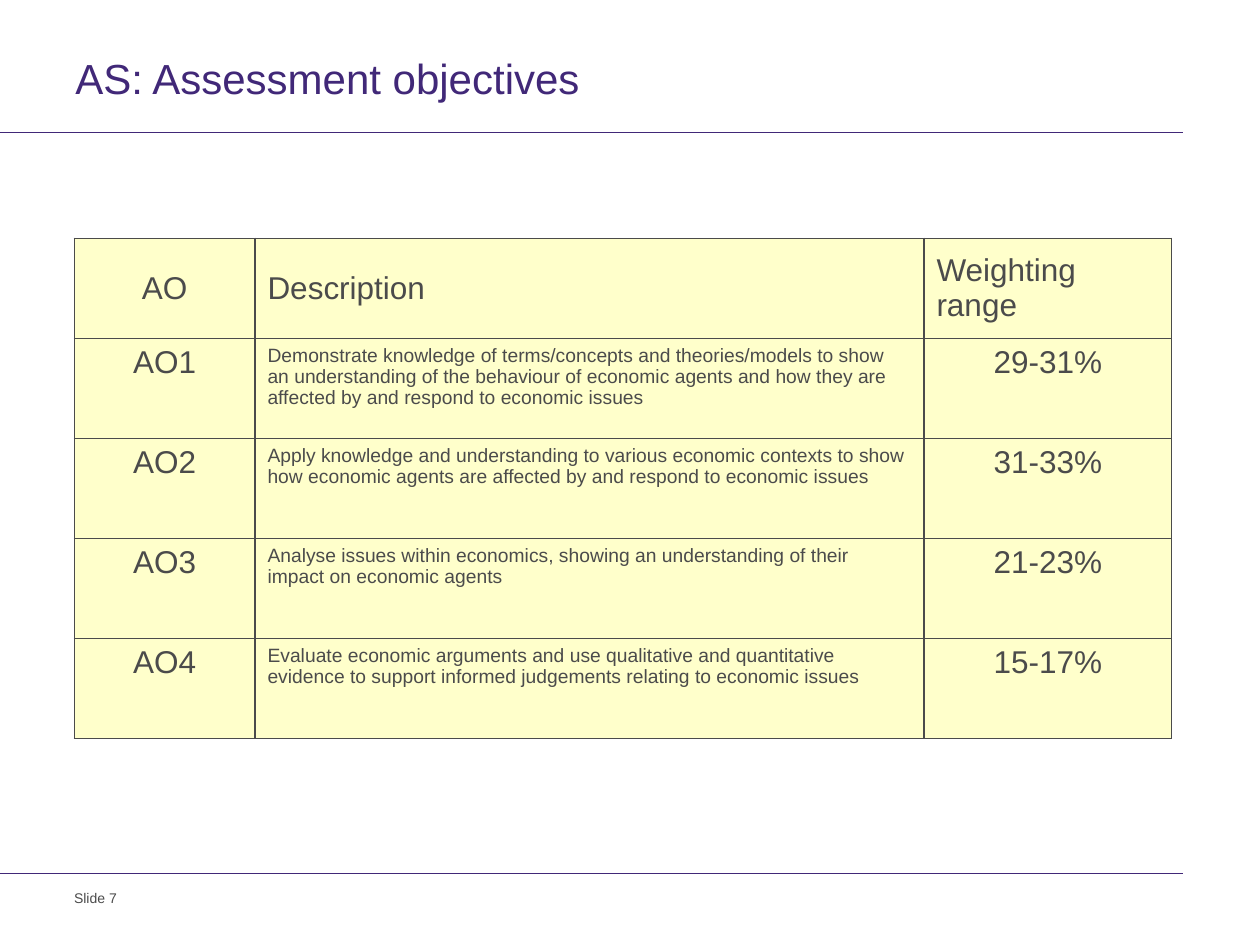
import pptx
import pptx.dml.color
import pptx.enum.shapes
import pptx.enum.text
import pptx.oxml
import pptx.oxml.ns
import pptx.util

Pt = pptx.util.Pt
RGBColor = pptx.dml.color.RGBColor
PP_ALIGN = pptx.enum.text.PP_ALIGN
MSO_ANCHOR = pptx.enum.text.MSO_ANCHOR

PURPLE = RGBColor(0x41, 0x28, 0x78)
GREY = RGBColor(0x4B, 0x4B, 0x4B)
CREAM = RGBColor(0xFF, 0xFF, 0xCB)

HEADER = ("AO", "Description", "Weighting range")
OBJECTIVES = [
    ("AO1", "Demonstrate knowledge of terms/concepts and theories/models to show "
     "an understanding of the behaviour of economic agents and how they are "
     "affected by and respond to economic issues", "29-31%"),
    ("AO2", "Apply knowledge and understanding to various economic contexts to show "
     "how economic agents are affected by and respond to economic issues", "31-33%"),
    ("AO3", "Analyse issues within economics, showing an understanding of their "
     "impact on economic agents", "21-23%"),
    ("AO4", "Evaluate economic arguments and use qualitative and quantitative "
     "evidence to support informed judgements relating to economic issues", "15-17%"),
]


class SlideBuilder:
    font = "Arial"

    def __init__(self, slide):
        self.slide = slide

    def style(self, p, size, color, align=PP_ALIGN.LEFT):
        p.alignment = align
        p.font.name = self.font
        p.font.size = Pt(size)
        p.font.color.rgb = color

    def text(self, text, x, y, w, h, size, color, spacing=None):
        tf = self.slide.shapes.add_textbox(Pt(x), Pt(y), Pt(w), Pt(h)).text_frame
        tf.word_wrap = True
        p = tf.paragraphs[0]
        p.text = text
        self.style(p, size, color)
        if spacing:
            p.line_spacing = Pt(spacing)

    def rule(self, y, width):
        line = self.slide.shapes.add_connector(
            pptx.enum.shapes.MSO_CONNECTOR.STRAIGHT, Pt(0), Pt(y), Pt(width), Pt(y))
        line.line.color.rgb = PURPLE
        line.line.width = Pt(0.6)
        line._element.spPr.append(pptx.oxml.parse_xml(
            f"<a:effectLst {pptx.oxml.ns.nsdecls('a')}/>"))

    def border(self, cell, color, width):
        tc_pr = cell._tc.get_or_add_tcPr()
        for i, side in enumerate(("lnL", "lnR", "lnT", "lnB")):
            tc_pr.insert(i, pptx.oxml.parse_xml(
                f"<a:{side} {pptx.oxml.ns.nsdecls('a')} w=\"{Pt(width)}\">"
                f"<a:solidFill><a:srgbClr val=\"{color}\"/></a:solidFill></a:{side}>"))

    def cell(self, cell, text, size, align, anchor):
        cell.fill.solid()
        cell.fill.fore_color.rgb = CREAM
        cell.vertical_anchor = anchor
        p = cell.text_frame.paragraphs[0]
        p.text = text
        self.style(p, size, GREY, align)
        self.border(cell, GREY, 1)

    def table(self, rows, x, y, widths, row_height):
        table = self.slide.shapes.add_table(
            len(rows), len(widths), Pt(x), Pt(y),
            Pt(sum(widths)), Pt(row_height * len(rows))).table
        for column, width in zip(table.columns, widths):
            column.width = Pt(width)
        for r, texts in enumerate(rows):
            table.rows[r].height = Pt(row_height)
            anchor = MSO_ANCHOR.TOP if r else MSO_ANCHOR.MIDDLE
            for c, text in enumerate(texts):
                size = 11 if r and c == 1 else 18
                centred = c == 0 or (r and c == 2)
                align = PP_ALIGN.CENTER if centred else PP_ALIGN.LEFT
                self.cell(table.cell(r, c), text, size, align, anchor)


def main():
    prs = pptx.Presentation()
    prs.slide_width, prs.slide_height = Pt(720), Pt(540)
    s = SlideBuilder(prs.slides.add_slide(prs.slide_layouts[6]))
    for y in (75.6, 499):
        s.rule(y, 676)
    s.text("AS: Assessment objectives", 36, 27.4, 648, 48, 24, PURPLE, spacing=28)
    s.table([HEADER, *OBJECTIVES], 42.5, 136.2, (103.2, 382.3, 141.6), 57.2)
    s.text("Slide 7", 35.2, 504.8, 112, 27, 8, GREY)
    prs.save("out.pptx")


if __name__ == "__main__":
    main()
